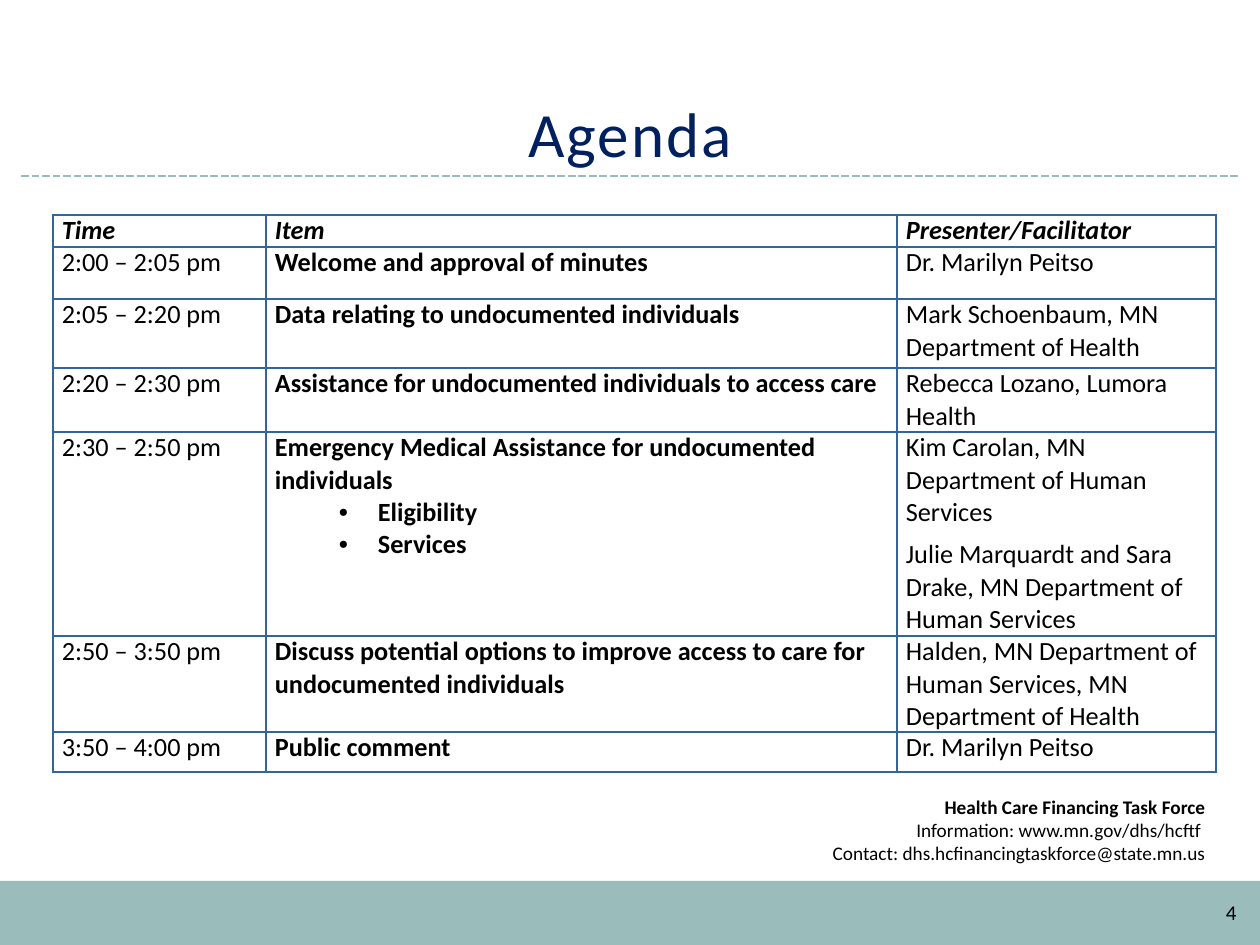
from typing import NamedTuple

from lxml import etree
from pptx import Presentation, util as u
from pptx.dml.color import RGBColor
from pptx.enum import dml, shapes, text
from pptx.oxml import ns

EMU_PER_PX = 914400 / 126
FONT = "Calibri"
COLORS = {
    "band": "9ABCBB",
    "title": "002060",
    "text": "000000",
    "border": "326599",
    "paper": "FFFFFF",
}


class Box(NamedTuple):
    left: int
    top: int
    width: int
    height: int


class Style(NamedTuple):
    size: int
    color: str = "text"
    bold: bool = False
    italic: bool = False


class AgendaItem(NamedTuple):
    time: str
    topic: str
    presenters: tuple[str, ...]
    height: int
    points: tuple[str, ...] = ()
    topic_space: int = 0


HEADERS = ("Time", "Item", "Presenter/Facilitator")
HEADER_HEIGHT = 32
COLUMN_WIDTHS = (213, 631, 319)
AGENDA = (
    AgendaItem("2:00 – 2:05 pm", "Welcome and approval of minutes",
               ("Dr. Marilyn Peitso",), 52),
    AgendaItem("2:05 – 2:20 pm", "Data relating to undocumented individuals",
               ("Mark Schoenbaum, MN Department of Health",), 69),
    AgendaItem("2:20 – 2:30 pm", "Assistance for undocumented individuals to access care",
               ("Rebecca Lozano, Lumora Health",), 64),
    AgendaItem("2:30 – 2:50 pm", "Emergency Medical Assistance for undocumented individuals",
               ("Kim Carolan, MN Department of Human Services",
                "Julie Marquardt and Sara Drake, MN Department of Human Services"),
               204, points=("Eligibility", "Services")),
    AgendaItem("2:50 – 3:50 pm",
               "Discuss potential options to improve access to care for undocumented individuals",
               ("Halden, MN Department of Human Services, MN Department of Health",),
               96, topic_space=6),
    AgendaItem("3:50 – 4:00 pm", "Public comment", ("Dr. Marilyn Peitso",), 40),
)

HEADER = Style(15, bold=True, italic=True)
PLAIN = Style(15)
STRONG = Style(15, bold=True)


def px(length: int) -> u.Emu:
    return u.Emu(round(length * EMU_PER_PX))


def color(name: str) -> RGBColor:
    return RGBColor.from_string(COLORS[name])


def add_run(paragraph, words: str, style: Style):
    run = paragraph.add_run()
    run.text = words
    run.font.name = FONT
    run.font.size = u.Pt(style.size)
    run.font.bold = style.bold
    run.font.italic = style.italic
    run.font.color.rgb = color(style.color)
    return run


def next_paragraph(frame):
    """Return the unused first paragraph, or a new one."""
    first = frame.paragraphs[0]
    return frame.add_paragraph() if first.runs else first


def add_text_box(slide, box: Box, align, anchor):
    frame = slide.shapes.add_textbox(*map(px, box)).text_frame
    frame.word_wrap = True
    frame.vertical_anchor = anchor
    frame.paragraphs[0].alignment = align
    return frame


def add_band(slide, box: Box) -> None:
    shape = slide.shapes.add_shape(shapes.MSO_SHAPE.RECTANGLE, *map(px, box))
    shape.shadow.inherit = False
    shape.fill.solid()
    shape.fill.fore_color.rgb = color("band")
    shape.line.fill.background()


def add_dashed_rule(slide, left: int, right: int, y: int) -> None:
    rule = slide.shapes.add_connector(
        shapes.MSO_CONNECTOR.STRAIGHT, px(left), px(y), px(right), px(y))
    rule.line.color.rgb = color("band")
    rule.line.width = u.Pt(1.5)
    rule.line.dash_style = dml.MSO_LINE.SQUARE_DOT
    etree.SubElement(rule.element.spPr, ns.qn("a:effectLst"))


def add_title(slide, words: str) -> None:
    frame = add_text_box(slide, Box(42, 32, 1176, 144),
                         text.PP_ALIGN.CENTER, text.MSO_ANCHOR.BOTTOM)
    paragraph = frame.paragraphs[0]
    paragraph.line_spacing = u.Pt(40)
    run = add_run(paragraph, words, Style(36, "title"))
    run.font._element.set("spc", "120")


def add_contact(slide) -> None:
    frame = add_text_box(slide, Box(572, 789, 646, 84),
                         text.PP_ALIGN.RIGHT, text.MSO_ANCHOR.TOP)
    paragraph = frame.paragraphs[0]
    add_run(paragraph, "Health Care Financing Task Force", Style(11, bold=True))
    paragraph.add_line_break()
    add_run(paragraph, "Information: www.mn.gov/dhs/hcftf ", Style(11))
    paragraph = frame.add_paragraph()
    paragraph.alignment = text.PP_ALIGN.RIGHT
    add_run(paragraph, "Contact: dhs.hcfinancingtaskforce@state.mn.us", Style(11))


def format_cell(cell) -> None:
    """Set insets, clear the fill and draw all four borders."""
    cell.margin_left = cell.margin_right = px(9)
    cell.margin_top = cell.margin_bottom = 0
    properties = cell._tc.get_or_add_tcPr()
    for side in ("a:lnL", "a:lnR", "a:lnT", "a:lnB"):
        line = etree.SubElement(properties, ns.qn(side), w=str(u.Pt(1)))
        fill = etree.SubElement(line, ns.qn("a:solidFill"))
        etree.SubElement(fill, ns.qn("a:srgbClr"), val=COLORS["border"])
    cell.fill.background()


def fill_cell(cell, lines: tuple[str, ...], style: Style, space_after: int = 6) -> None:
    for line in lines:
        paragraph = next_paragraph(cell.text_frame)
        paragraph.space_after = u.Pt(space_after)
        add_run(paragraph, line, style)


def add_bullet(cell, words: str) -> None:
    paragraph = next_paragraph(cell.text_frame)
    properties = paragraph._p.get_or_add_pPr()
    properties.set("marL", str(px(103)))
    properties.set("indent", str(px(-39)))
    etree.SubElement(properties, ns.qn("a:buFont"), typeface="Arial")
    etree.SubElement(properties, ns.qn("a:buChar"), char="•")
    add_run(paragraph, words, STRONG)


def add_agenda(slide, left: int, top: int) -> None:
    heights = (HEADER_HEIGHT, *(item.height for item in AGENDA))
    box = Box(left, top, sum(COLUMN_WIDTHS), sum(heights))
    table = slide.shapes.add_table(len(heights), len(HEADERS), *map(px, box)).table
    table.first_row = table.horz_banding = False
    for column, width in zip(table.columns, COLUMN_WIDTHS):
        column.width = px(width)
    for row, height in zip(table.rows, heights):
        row.height = px(height)
    for cell in table.iter_cells():
        format_cell(cell)
    for column, words in enumerate(HEADERS):
        fill_cell(table.cell(0, column), (words,), HEADER)
    for row, item in enumerate(AGENDA, start=1):
        time, topic, presenter = (table.cell(row, column) for column in range(3))
        fill_cell(time, (item.time,), PLAIN)
        fill_cell(topic, (item.topic,), STRONG, item.topic_space)
        for point in item.points:
            add_bullet(topic, point)
        fill_cell(presenter, item.presenters, PLAIN)


def main() -> None:
    presentation = Presentation()
    presentation.slide_width, presentation.slide_height = px(1260), px(945)
    slide = presentation.slides.add_slide(presentation.slide_layouts[6])
    slide.background.fill.solid()
    slide.background.fill.fore_color.rgb = color("paper")

    add_band(slide, Box(0, 881, 1260, 64))
    add_dashed_rule(slide, 21, 1239, 176)
    add_contact(slide)
    add_title(slide, "Agenda")
    add_agenda(slide, 53, 215)
    number = add_text_box(slide, Box(1176, 887, 73, 50),
                          text.PP_ALIGN.RIGHT, text.MSO_ANCHOR.MIDDLE)
    add_run(number.paragraphs[0], "4", Style(12))

    presentation.save("out.pptx")


if __name__ == "__main__":
    main()
